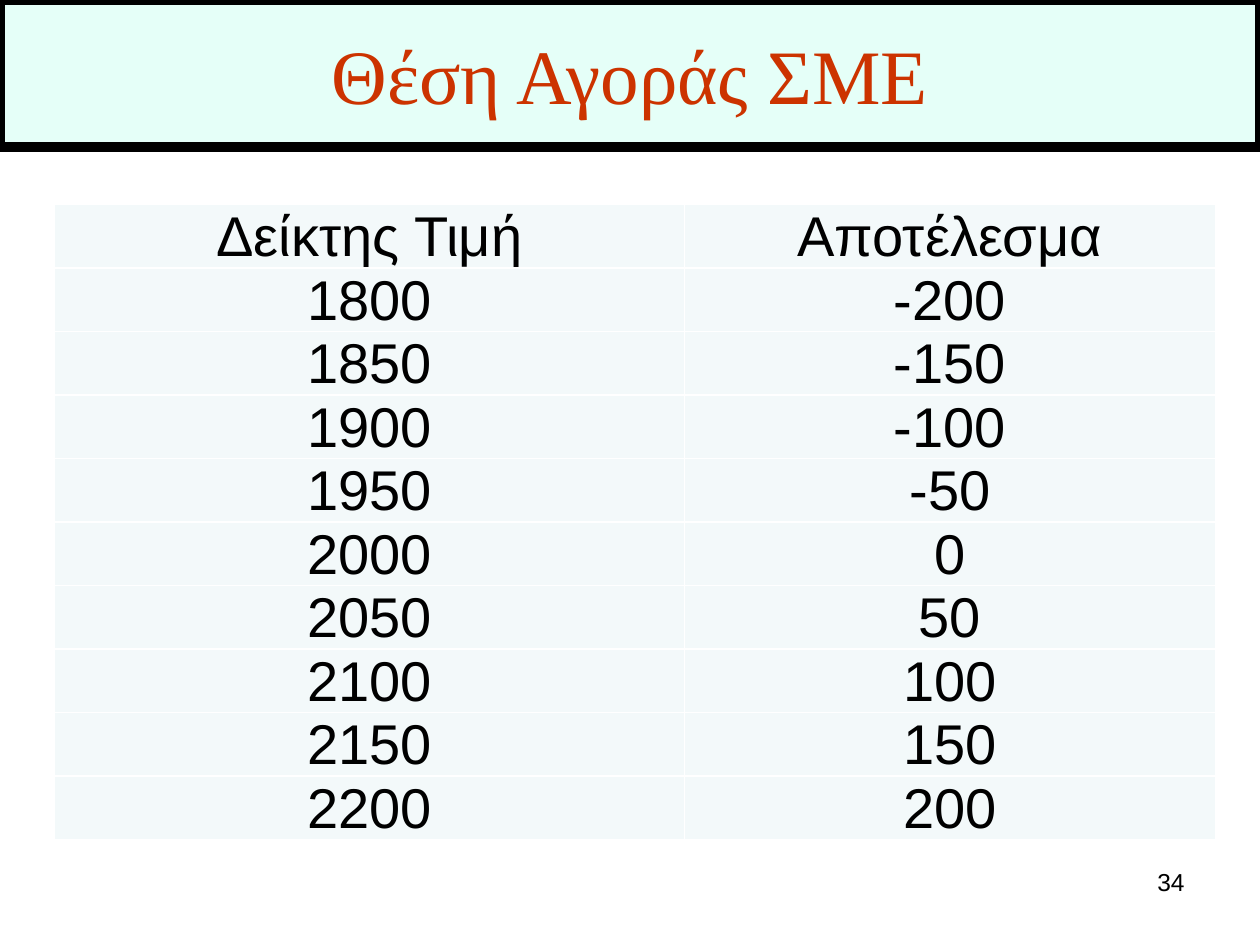
from dataclasses import dataclass

from lxml.etree import SubElement
from pptx import Presentation
from pptx.dml.color import RGBColor as Rgb
from pptx.enum.shapes import MSO_SHAPE as Shape
from pptx.enum.text import MSO_ANCHOR as Anchor, PP_ALIGN as Align
from pptx.oxml.ns import qn
from pptx.util import Cm, Pt


@dataclass(frozen=True)
class Theme:
    """Colours, fonts and type sizes of the slide."""
    ink: str = "000000"
    accent: str = "CC3300"
    banner: str = "E5FFF8"
    cell: str = "F3F9FA"
    rule: str = "FFFFFF"
    serif: str = "Times New Roman"
    sans: str = "Arial"
    title_size: int = 44
    table_size: int = 32
    number_size: int = 14
    table_spacing: float = 0.9


THEME = Theme()
HEADINGS = ("Δείκτης Τιμή", "Αποτέλεσμα")
PURCHASE_PRICE = 2000
INDEX_PRICES = range(1800, 2201, 50)


def write_text(frame, text, size, font, color, align):
    """Put one styled span in the first paragraph of a text frame."""
    para = frame.paragraphs[0]
    para.alignment = align
    span = para.add_run()
    span.text = text
    span.font.size = Pt(size)
    span.font.name = font
    span.font.color.rgb = Rgb.from_string(color)


def add_banner(page, text):
    """Draw the outlined title band across the top."""
    box = page.shapes.add_shape(Shape.RECTANGLE, 0, 0, Cm(25.4), Cm(2.97))
    box.shadow.inherit = False
    box.fill.solid()
    box.fill.fore_color.rgb = Rgb.from_string(THEME.banner)
    box.line.color.rgb = Rgb.from_string(THEME.ink)
    box.line.width = Pt(6)
    box.text_frame.word_wrap = True
    box.text_frame.vertical_anchor = Anchor.MIDDLE
    write_text(box.text_frame, text, THEME.title_size, THEME.serif, THEME.accent, Align.CENTER)


def add_borders(cell):
    """Rule all four sides of a table cell."""
    properties = cell._tc.get_or_add_tcPr()
    for position, side in enumerate(("lnL", "lnR", "lnT", "lnB")):
        line = SubElement(properties, qn(f"a:{side}"), w=str(Pt(1)))
        fill = SubElement(line, qn("a:solidFill"))
        SubElement(fill, qn("a:srgbClr"), val=THEME.rule)
        properties.insert(position, line)


def style_cell(cell, text):
    """Fill a table cell, set its margins and write its text."""
    cell.fill.solid()
    cell.fill.fore_color.rgb = Rgb.from_string(THEME.cell)
    cell.margin_left = cell.margin_right = cell.margin_top = Cm(0.03)
    cell.margin_bottom = 0
    cell.vertical_anchor = Anchor.BOTTOM
    write_text(cell.text_frame, text, THEME.table_size, THEME.sans, THEME.ink, Align.CENTER)
    cell.text_frame.paragraphs[0].line_spacing = THEME.table_spacing
    add_borders(cell)


def add_payoff_table(page, rows):
    """Lay out the index prices and their results."""
    widths = (Cm(12.7), Cm(10.7))
    row_height = Cm(1.28)
    table = page.shapes.add_table(
        len(rows), len(widths), Cm(1.1), Cm(4.12), sum(widths), row_height * len(rows)
    ).table
    for column, width in zip(table.columns, widths):
        column.width = width
    for row, texts in zip(table.rows, rows):
        row.height = row_height
        for cell, text in zip(row.cells, texts):
            style_cell(cell, text)


def add_page_number(page, number):
    """Write the page number at the lower right."""
    box = page.shapes.add_textbox(Cm(18.2), Cm(17.35), Cm(5.93), Cm(1.32))
    box.text_frame.word_wrap = True
    write_text(box.text_frame, number, THEME.number_size, THEME.sans, THEME.ink, Align.RIGHT)


def main():
    """Build and save the slide."""
    deck = Presentation()
    deck.slide_width, deck.slide_height = Cm(25.4), Cm(19.05)
    page = deck.slides.add_slide(deck.slide_layouts[6])
    add_page_number(page, "34")
    add_banner(page, "Θέση Αγοράς ΣΜΕ")
    results = [(str(price), str(price - PURCHASE_PRICE)) for price in INDEX_PRICES]
    add_payoff_table(page, [HEADINGS, *results])
    deck.save("out.pptx")


if __name__ == "__main__":
    main()
